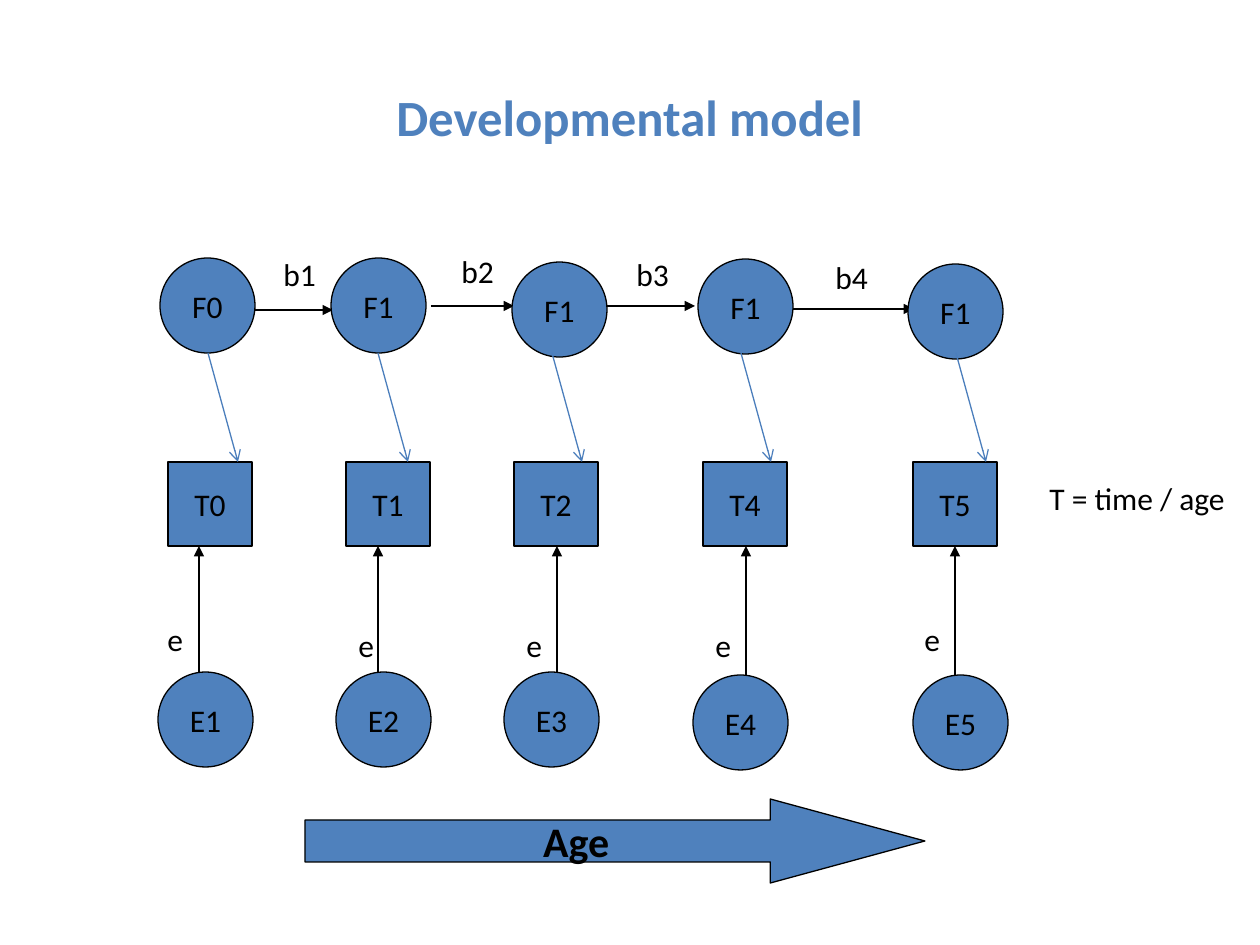
from lxml import etree
from pptx import Presentation
from pptx.dml.color import RGBColor
from pptx.enum.shapes import MSO_CONNECTOR, MSO_SHAPE
from pptx.enum.text import MSO_ANCHOR, MSO_AUTO_SIZE, PP_ALIGN
from pptx.oxml.ns import qn
from pptx.util import Emu, Pt

RECT = MSO_SHAPE.RECTANGLE
OVAL = MSO_SHAPE.OVAL
RIGHT_ARROW = MSO_SHAPE.RIGHT_ARROW
STRAIGHT = MSO_CONNECTOR.STRAIGHT
MIDDLE = MSO_ANCHOR.MIDDLE
GROW = MSO_AUTO_SIZE.SHAPE_TO_FIT_TEXT
CENTER = PP_ALIGN.CENTER
LEFT = PP_ALIGN.LEFT
PX_PER_INCH = 126
BLUE = "4F81BD"
LINK_BLUE = "4B7EBC"
BLACK = "000000"


def px(n):
    return Emu(round(n * 914400 / PX_PER_INCH))


def rgb(value):
    return RGBColor.from_string(value)


class Diagram:
    font = "Calibri"
    size = 18
    line_width = 0.75

    def __init__(self, slide):
        self.slide = slide

    def set_text(self, sp, text, size=size, color=BLACK, bold=False, align=CENTER):
        tf = sp.text_frame
        tf.text = text
        p = tf.paragraphs[0]
        p.alignment = align
        p.font.name = self.font
        p.font.size = Pt(size)
        p.font.bold = bold
        p.font.color.rgb = rgb(color)
        return tf

    def title(self, text, x, y, w, h):
        sp = self.slide.shapes.title
        sp.left, sp.top, sp.width, sp.height = map(px, (x, y, w, h))
        tf = self.set_text(sp, text, 29, BLUE, True)
        tf.vertical_anchor = MIDDLE

    def node(self, kind, text, x, y, w, h, size=size, bold=False):
        sp = self.slide.shapes.add_shape(kind, px(x), px(y), px(w), px(h))
        sp.shadow.inherit = False
        sp.fill.solid()
        sp.fill.fore_color.rgb = rgb(BLUE)
        sp.line.color.rgb = rgb(BLACK)
        sp.line.width = Pt(self.line_width)
        tf = self.set_text(sp, text, size, bold=bold)
        tf.vertical_anchor = MIDDLE
        tf.word_wrap = False
        return sp

    def label(self, text, x, y, w, h):
        sp = self.slide.shapes.add_textbox(px(x), px(y), px(w), px(h))
        tf = self.set_text(sp, text, align=LEFT)
        tf.word_wrap = False
        tf.auto_size = GROW

    def arrow(self, x1, y1, x2, y2, color=BLACK, head="triangle"):
        cn = self.slide.shapes.add_connector(STRAIGHT, px(x1), px(y1), px(x2), px(y2))
        cn.line.color.rgb = rgb(color)
        cn.line.width = Pt(self.line_width)
        sp_pr = cn._element.spPr
        etree.SubElement(sp_pr.find(qn("a:ln")), qn("a:tailEnd"), type=head)
        etree.SubElement(sp_pr, qn("a:effectLst"))


def main():
    prs = Presentation()
    prs.slide_width, prs.slide_height = px(1260), px(945)
    d = Diagram(prs.slides.add_slide(prs.slide_layouts[5]))
    d.title("Developmental model", 63, 38, 1134, 157)

    square, circle = 84, 95
    test_top = 462
    test_bottom = test_top + square
    tests = [("T0", 168), ("T1", 346), ("T2", 514), ("T4", 703), ("T5", 913)]
    errors = [
        ("E1", 158, 672, 199, 155, 614),
        ("E2", 336, 672, 378, 346, 620),
        ("E3", 504, 672, 557, 514, 620),
        ("E4", 693, 675, 746, 703, 620),
        ("E5", 913, 675, 955, 912, 614),
    ]
    paths = [
        ("b1", 239, 333, 310, 271, 249),
        ("b2", 431, 514, 306, 449, 246),
        ("b3", 591, 695, 306, 624, 249),
        ("b4", 789, 914, 309, 823, 252),
    ]
    factors = [
        ("F0", 160, 258, 208),
        ("F1", 331, 258, 378),
        ("F1", 512, 262, 552),
        ("F1", 698, 259, 741),
        ("F1", 908, 264, 956),
    ]

    for text, x in tests:
        d.node(RECT, text, x, test_top, square, square)
    for text, x, y, line_x, label_x, label_y in errors:
        d.node(OVAL, text, x, y, circle, circle)
        d.arrow(line_x, y, line_x, test_bottom)
        d.label("e", label_x, label_y, 45, 54)
    for text, x1, x2, y, label_x, label_y in paths:
        d.arrow(x1, y, x2, y)
        d.label(text, label_x, label_y, 58, 50)

    age = d.node(RIGHT_ARROW, "Age", 305, 799, 620, 84, 24, True)
    age.adjustments[1] = 1.84
    d.label("T = time / age", 1037, 473, 203, 50)

    for text, x, y, link_x in factors:
        d.node(OVAL, text, x, y, circle, circle)
        d.arrow(link_x, 353, link_x + 30, test_top, LINK_BLUE, "arrow")

    prs.save("out.pptx")


if __name__ == "__main__":
    main()
